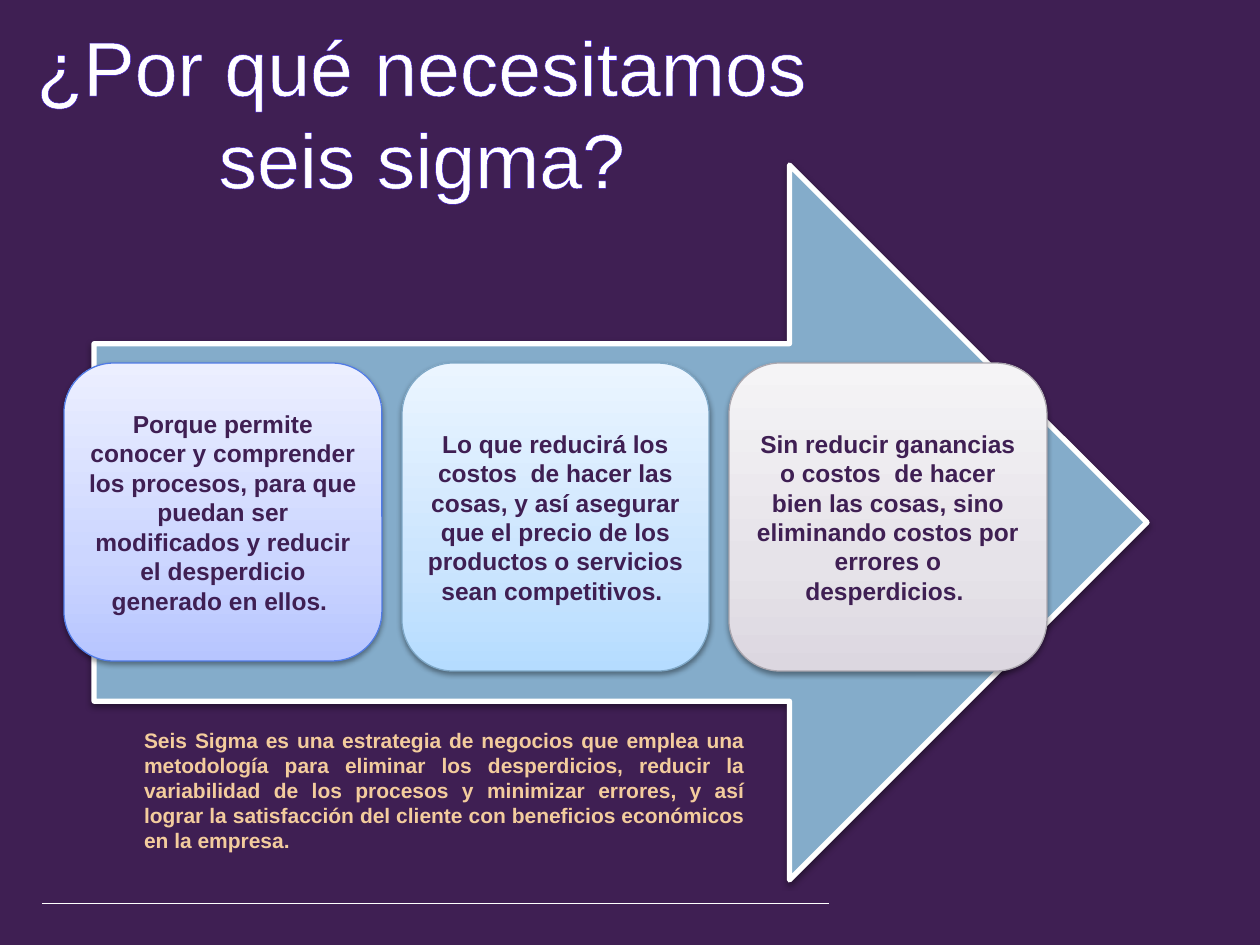
from lxml import etree
from pptx import Presentation
from pptx.dml.color import RGBColor
from pptx.enum.shapes import MSO_CONNECTOR, MSO_SHAPE
from pptx.enum.text import MSO_ANCHOR, PP_ALIGN
from pptx.oxml.ns import qn
from pptx.util import Emu, Pt

ARROW, ROUNDED = MSO_SHAPE.RIGHT_ARROW, MSO_SHAPE.ROUNDED_RECTANGLE
STRAIGHT = MSO_CONNECTOR.STRAIGHT
TOP, MIDDLE = MSO_ANCHOR.TOP, MSO_ANCHOR.MIDDLE
CENTER, JUSTIFY = PP_ALIGN.CENTER, PP_ALIGN.JUSTIFY
PX = 914400 / 126


def px(*values):
    return [Emu(round(v * PX)) for v in values]


def rgb(hex_text):
    return RGBColor.from_string(hex_text)


prs = Presentation()
prs.slide_width, prs.slide_height = px(1260, 945)
s = prs.slides.add_slide(prs.slide_layouts[6])
s.background.fill.solid()
s.background.fill.fore_color.rgb = rgb("3F1F53")

# Footer rule
line = s.shapes.add_connector(STRAIGHT, *px(42, 903, 829, 903))
line.line.color.rgb = rgb("FFFFFF")
line.line.width = Pt(0.5)
etree.SubElement(line._element.spPr, qn("a:effectLst"))

# Big arrow
arrow = s.shapes.add_shape(ARROW, *px(94, 165, 1053, 715))
arrow.fill.solid()
arrow.fill.fore_color.rgb = rgb("84ACCA")
arrow.line.color.rgb = rgb("FFFFFF")
arrow.line.width = Pt(3)
shadowed = [arrow]

# Reason cards: left, width, height, gradient from bottom to top, border, text
cards = [
    (64, 318, 298, ("B7C5FF", "CCD6FF", "ECEFFF"), "507BE5",
     "Porque permite conocer y comprender los procesos, para que puedan ser "
     "modificados y reducir el desperdicio generado en ellos. "),
    (402, 307, 308, ("B5DCFF", "CBE5FE", "EBF5FF"), "7FA8C7",
     "Lo que reducirá los costos  de hacer las cosas, y así asegurar que el "
     "precio de los productos o servicios sean competitivos. "),
    (729, 318, 308, ("DCD7E0", "E6E3E9", "F5F4F6"), "ABA7AF",
     "Sin reducir ganancias o costos  de hacer bien las cosas, sino "
     "eliminando costos por errores o desperdicios. "),
]
card_format = {"size": Pt(14), "bold": True, "name": "Arial"}
texts = []
for left, width, height, colors, border, text in cards:
    sp = s.shapes.add_shape(ROUNDED, *px(left, 363, width, height))
    sp.fill.gradient()
    sp.fill.gradient_angle = 90
    stops = sp._element.spPr.find(".//" + qn("a:gsLst"))
    stops.clear()
    for pos, color in zip((0, 35, 100), colors):
        gs = etree.SubElement(stops, qn("a:gs"), pos=str(pos * 1000))
        etree.SubElement(gs, qn("a:srgbClr"), val=color)
    sp.line.color.rgb = rgb(border)
    sp.line.width = Pt(0.75)
    shadowed.append(sp)
    texts.append((sp, text, MIDDLE, CENTER, 10, "3F1F53", card_format))

# Soft shadow below the arrow and the cards
for sp in shadowed:
    sp.shadow.inherit = False
    effects = sp._element.spPr.find(qn("a:effectLst"))
    shadow = etree.SubElement(effects, qn("a:outerShdw"), blurRad=str(Pt(3.1)),
                              dist=str(Pt(1.6)), dir="5400000", rotWithShape="0")
    black = etree.SubElement(shadow, qn("a:srgbClr"), val="000000")
    etree.SubElement(black, qn("a:alpha"), val="38000")

# Title and definition
title = s.shapes.add_textbox(*px(15, 37, 814, 149))
texts.append((title, "¿Por qué necesitamos seis sigma?", MIDDLE, CENTER, 13,
              "FFFFFF", {"size": Pt(44), "name": "Arial"}))
definition = s.shapes.add_textbox(*px(84, 721, 674, 139))
texts.append((definition,
              "Seis Sigma es una estrategia de negocios que emplea una "
              "metodología para eliminar los desperdicios, reducir la "
              "variabilidad de los procesos y minimizar errores, y así lograr "
              "la satisfacción del cliente con beneficios económicos en la "
              "empresa.", TOP, JUSTIFY, 13, "F3CC9D",
              {"size": Pt(12), "bold": True, "name": "Arial"}))

# Text of all boxes
for sp, text, anchor, align, inset, color, font_format in texts:
    tf = sp.text_frame
    tf.word_wrap = True
    tf.vertical_anchor = anchor
    tf.margin_left, tf.margin_right = px(inset, inset)
    p = tf.paragraphs[0]
    p.alignment = align
    r = p.add_run()
    r.text = text
    for name, value in font_format.items():
        setattr(r.font, name, value)
    r.font.color.rgb = rgb(color)
definition.text_frame.margin_left = px(60)[0]

# Outline of the title letters
outline = etree.Element(qn("a:ln"), w=str(Pt(1.5)))
solid = etree.SubElement(outline, qn("a:solidFill"))
etree.SubElement(solid, qn("a:srgbClr"), val="310AC2")
title.text_frame.paragraphs[0].runs[0].font._element.insert(0, outline)

prs.save("out.pptx")
